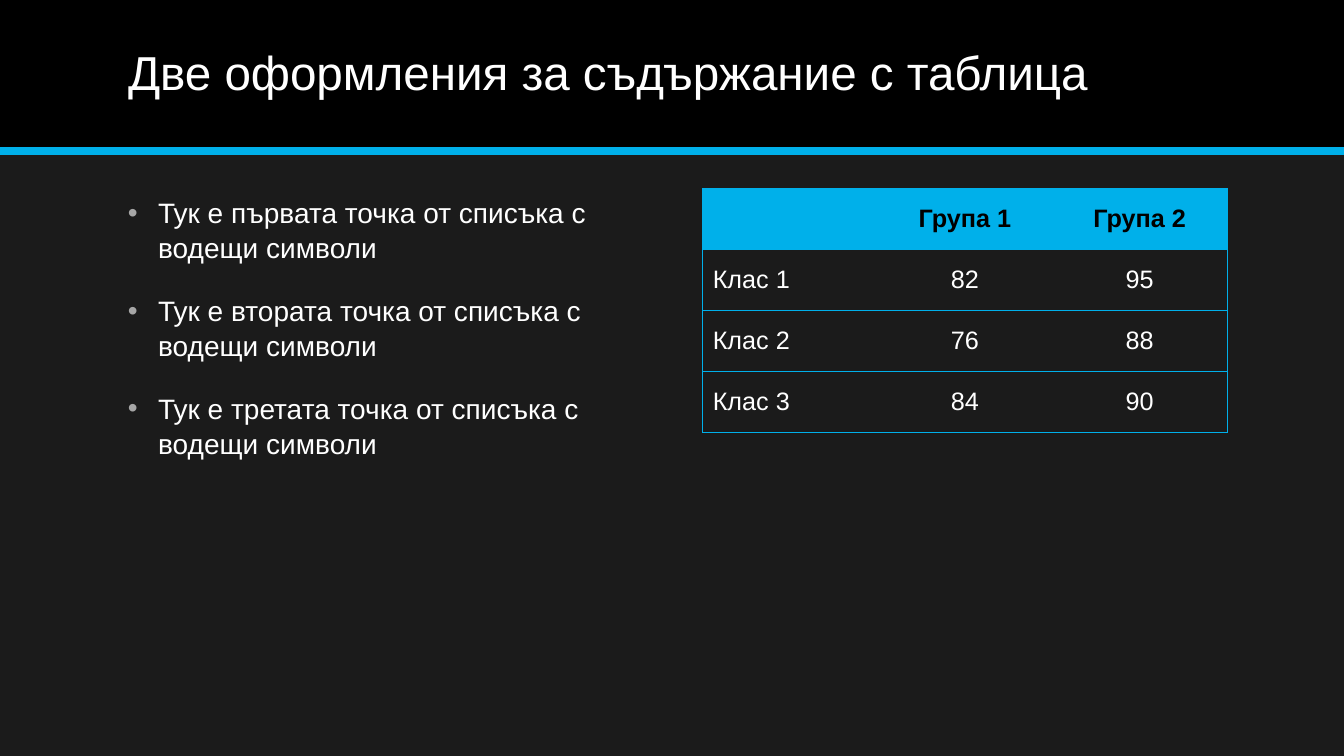
from lxml import etree
from pptx import Presentation
from pptx import util as u
from pptx.dml.color import RGBColor
from pptx.enum import shapes, text
from pptx.oxml import ns

COLORS = {"background": "1B1B1B", "band": "000000", "accent": "00B0EA",
          "text": "FFFFFF", "header_text": "000000", "bullet": "A6A6A6"}


def format_font(font, color, **values):
    font.color.rgb = RGBColor.from_string(COLORS[color])
    for name, value in {"name": "Arial", **values}.items():
        setattr(font, name, value)


def add_element(parent, tag, **attributes):
    return etree.SubElement(parent, ns.qn(tag), **attributes)


deck = Presentation()
deck.slide_width = u.Inches(13.33)
deck.slide_height = u.Inches(7.5)
page = deck.slides.add_slide(deck.slide_layouts[5])
page.background.fill.solid()
page.background.fill.fore_color.rgb = RGBColor.from_string(COLORS["background"])

band = page.shapes.add_shape(shapes.MSO_SHAPE.RECTANGLE, 0, 0, deck.slide_width, u.Inches(1.5))
band.shadow.inherit = False
band.fill.solid()
band.fill.fore_color.rgb = RGBColor.from_string(COLORS["band"])
band.line.fill.background()

rule = page.shapes.add_connector(shapes.MSO_CONNECTOR.STRAIGHT, 0, u.Inches(1.5),
                                 deck.slide_width, u.Inches(1.5))
rule.line.color.rgb = RGBColor.from_string(COLORS["accent"])
rule.line.width = u.Pt(6)
add_element(rule._element.spPr, "a:effectLst")

title = page.shapes.title
page.shapes._spTree.append(title._element)
title.left, title.top, title.width, title.height = map(u.Inches, (1.17, 0.14, 11, 1.2))
title.text_frame.text = "Две оформления за съдържание с таблица"
title.text_frame.vertical_anchor = text.MSO_ANCHOR.MIDDLE
title.text_frame.auto_size = text.MSO_AUTO_SIZE.NONE
para = title.text_frame.paragraphs[0]
para.alignment = text.PP_ALIGN.LEFT
para.line_spacing = 0.9
format_font(para.font, "text", size=u.Pt(34))

box = page.shapes.add_textbox(*map(u.Inches, (1.17, 1.88, 5.2, 4.88)))
frame = box.text_frame
frame.word_wrap = True
for index, ordinal in enumerate(("първата", "втората", "третата")):
    para = frame.add_paragraph() if index else frame.paragraphs[0]
    para.text = f"Тук е {ordinal} точка от списъка с водещи символи"
    para.line_spacing = 1.04
    para.space_before = u.Pt(20 if index else 0)
    properties = para._p.get_or_add_pPr()
    properties.set("marL", str(u.Inches(0.3)))
    properties.set("indent", str(-u.Inches(0.3)))
    bullet_color = add_element(properties, "a:buClr")
    add_element(bullet_color, "a:srgbClr", val=COLORS["bullet"])
    add_element(properties, "a:buFont", typeface="Arial")
    add_element(properties, "a:buChar", char="•")
    format_font(para.font, "text", size=u.Pt(20))

rows = [("", "Група 1", "Група 2"),
        ("Клас 1", "82", "95"),
        ("Клас 2", "76", "88"),
        ("Клас 3", "84", "90")]
table = page.shapes.add_table(4, 3, *map(u.Inches, (6.97, 1.87, 5.2, 2.42))).table
table.horz_banding = False
for row_index, row in enumerate(rows):
    is_header = row_index == 0
    for column_index, value in enumerate(row):
        cell = table.cell(row_index, column_index)
        cell.text = value
        cell.vertical_anchor = text.MSO_ANCHOR.MIDDLE
        para = cell.text_frame.paragraphs[0]
        para.alignment = text.PP_ALIGN.CENTER if column_index else text.PP_ALIGN.LEFT
        format_font(para.font, "header_text" if is_header else "text",
                    size=u.Pt(18), bold=is_header)
        borders = {"a:lnL": column_index == 0, "a:lnR": column_index == 2,
                   "a:lnT": True, "a:lnB": True}
        properties = cell._tc.get_or_add_tcPr()
        for tag, visible in borders.items():
            border = add_element(properties, tag, w=str(u.Pt(0.5)))
            fill = add_element(border, "a:solidFill" if visible else "a:noFill")
            if visible:
                add_element(fill, "a:srgbClr", val=COLORS["accent"])
        if is_header:
            cell.fill.solid()
            cell.fill.fore_color.rgb = RGBColor.from_string(COLORS["accent"])
        else:
            cell.fill.background()

deck.save("out.pptx")
